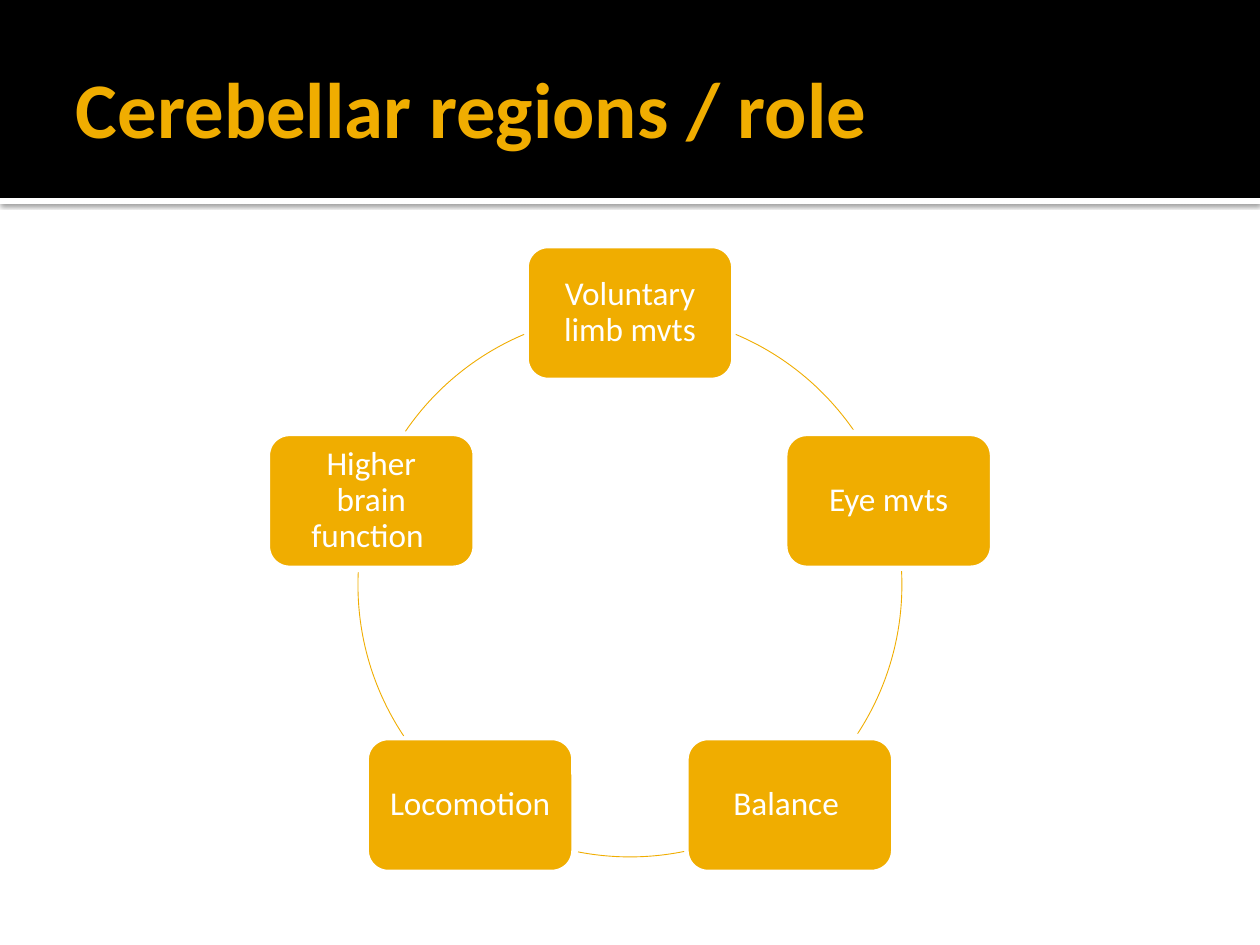
from dataclasses import dataclass
from math import cos, radians, sin

from lxml.etree import SubElement
from pptx import Presentation
from pptx.dml.color import RGBColor
from pptx.enum.shapes import MSO_SHAPE
from pptx.enum.text import MSO_ANCHOR, MSO_AUTO_SIZE, PP_ALIGN
from pptx.oxml.ns import qn
from pptx.util import Emu, Pt

PX = 914400 // 126
COLORS = {"gold": "F0AD00", "white": "FFFFFF", "black": "000000"}
FONT = "Calibri"

# Ring of nodes
MID_X, MID_Y, RADIUS = 630, 585, 272
NODE_W, NODE_H = 209, 136


@dataclass
class Node:
    text: str
    start: float  # arc to the next node, degrees clockwise from east
    end: float


NODES = [
    Node("Voluntary limb mvts", 292.9, 325.6),
    Node("Eye mvts", 357.1, 33.7),
    Node("Balance ", 78.5, 101.5),
    Node("Locomotion ", 146.3, 182.9),
    Node("Higher brain function ", 214.4, 247.1),
]


def px(n: float) -> Emu:
    return Emu(round(n * PX))


def color(name: str) -> RGBColor:
    return RGBColor.from_string(COLORS[name])


def write(shape, text: str, *, size: float, hue: str, bold: bool = False,
          align=PP_ALIGN.LEFT, space: float = 1.0,
          pad: tuple = (16, 16, 16, 16)) -> None:
    frame = shape.text_frame
    frame.word_wrap = True
    frame.auto_size = MSO_AUTO_SIZE.NONE
    frame.vertical_anchor = MSO_ANCHOR.MIDDLE
    (frame.margin_left, frame.margin_top,
     frame.margin_right, frame.margin_bottom) = map(px, pad)
    para = frame.paragraphs[0]
    para.alignment, para.line_spacing = align, space
    run = para.add_run()
    run.text = text
    font = run.font
    font.name, font.size, font.bold = FONT, Pt(size), bold
    font.color.rgb = color(hue)


def add_box(slide, kind, x: float, y: float, w: float, h: float, *,
            fill: str = "", line: str = "", width: float = 0):
    shape = slide.shapes.add_shape(kind, px(x), px(y), px(w), px(h))
    shape.shadow.inherit = False
    if fill:
        shape.fill.solid()
        shape.fill.fore_color.rgb = color(fill)
    else:
        shape.fill.background()
    if line:
        shape.line.color.rgb = color(line)
        shape.line.width = Pt(width)
    else:
        shape.line.fill.background()
    return shape


def add_shadow(shape) -> None:
    effects = shape._element.spPr.find(qn("a:effectLst"))
    outer = SubElement(effects, qn("a:outerShdw"), blurRad=str(Pt(2.5)),
                       dist=str(Pt(0.8)), dir="5400000", algn="tl",
                       rotWithShape="0")
    tint = SubElement(outer, qn("a:srgbClr"), val=COLORS["black"])
    SubElement(tint, qn("a:alpha"), val="60000")


def add_node(slide, node: Node, angle: float) -> None:
    x = MID_X + RADIUS * cos(radians(angle))
    y = MID_Y + RADIUS * sin(radians(angle))
    box = add_box(slide, MSO_SHAPE.ROUNDED_RECTANGLE,
                  x - NODE_W / 2, y - NODE_H / 2, NODE_W, NODE_H,
                  fill="gold", line="white", width=3.78)
    write(box, node.text, size=19, hue="white",
          align=PP_ALIGN.CENTER, space=0.9)


def add_arc(slide, node: Node) -> None:
    arc = add_box(slide, MSO_SHAPE.ARC, MID_X - RADIUS, MID_Y - RADIUS,
                  2 * RADIUS, 2 * RADIUS, line="gold", width=0.5)
    # Angles are stored in 60000ths, adjustments in 100000ths
    arc.adjustments[0] = node.start * 0.6
    arc.adjustments[1] = node.end * 0.6


def main() -> None:
    deck = Presentation()
    deck.slide_width, deck.slide_height = px(1260), px(945)
    slide = deck.slides.add_slide(deck.slide_layouts[5])

    # Header band with a shadowed white strip
    strip = add_box(slide, MSO_SHAPE.RECTANGLE, 0, 198, 1260, 6, fill="white")
    add_shadow(strip)
    add_box(slide, MSO_SHAPE.RECTANGLE, 0, 0, 1260, 198, fill="black")

    # Title, brought in front of the band
    title = slide.shapes.title
    title.left, title.top, title.width, title.height = map(
        px, (63, 21, 1134, 173))
    slide.shapes._spTree.append(title._element)
    write(title, "Cerebellar regions / role", size=45, hue="gold", bold=True,
          pad=(13, 6, 6, 6))

    # Cycle, clockwise from the top
    step = 360 / len(NODES)
    for i, node in enumerate(NODES):
        add_node(slide, node, i * step - 90)
        add_arc(slide, node)

    deck.save("out.pptx")


if __name__ == "__main__":
    main()
